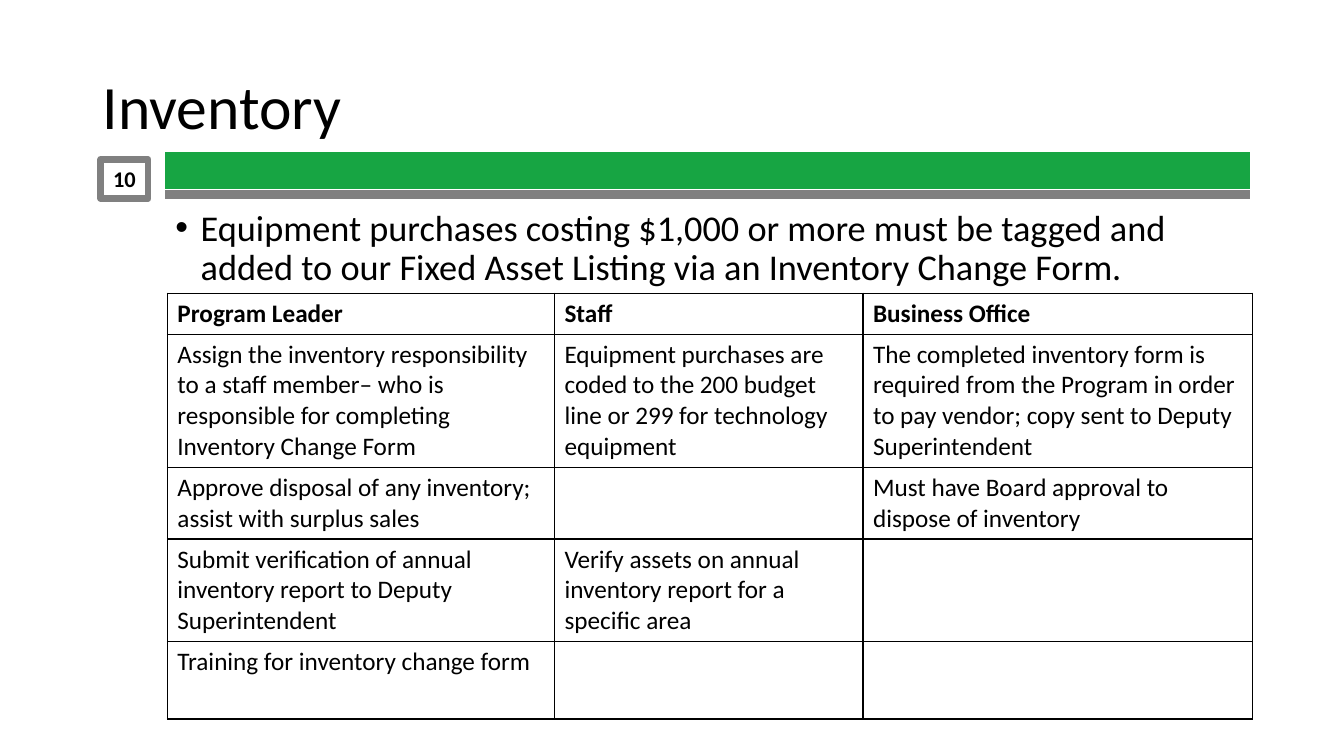
from dataclasses import dataclass

from lxml.etree import SubElement
from pptx import Presentation
from pptx.dml.color import RGBColor
from pptx.enum.shapes import MSO_CONNECTOR, MSO_SHAPE
from pptx.enum.text import MSO_ANCHOR, MSO_AUTO_SIZE, PP_ALIGN
from pptx.oxml.ns import qn
from pptx.slide import Slide
from pptx.table import _Cell
from pptx.text.text import TextFrame
from pptx.util import Inches, Pt

COLORS = {"text": "000000", "green": "17A543", "gray": "808080"}
FONT = "Calibri"
RULE_LEFT, RULE_RIGHT = 1.64, 12.4
COLUMN_WIDTHS = [3.84, 3.06, 3.86]


@dataclass
class Rule:
    top: float
    width: float
    color: str


@dataclass
class TableRow:
    height: float
    texts: tuple[str, str, str]
    bold: bool = False


RULES = [Rule(1.69, 26.25, "green"), Rule(1.93, 6.5, "gray")]

TABLE_ROWS = [
    TableRow(0.37, ("Program Leader", "Staff", "Business Office"), bold=True),
    TableRow(1.2, (
        "Assign the inventory responsibility to a staff member– who is "
        "responsible for completing Inventory Change Form",
        "Equipment purchases are coded to the 200 budget line or 299 for "
        "technology equipment",
        "The completed inventory form is required from the Program in order "
        "to pay vendor; copy sent to Deputy Superintendent",
    )),
    TableRow(0.65, (
        "Approve disposal of any inventory; assist with surplus sales",
        "",
        "Must have Board approval to dispose of inventory",
    )),
    TableRow(0.92, (
        "Submit verification of annual inventory report to Deputy Superintendent",
        "Verify assets on annual inventory report for a specific area",
        "",
    )),
    TableRow(0.77, ("Training for inventory change form", "", "")),
]


def rgb(name: str) -> RGBColor:
    return RGBColor.from_string(COLORS[name])


def write_text(frame: TextFrame, text: str, size: float, bold: bool = False,
               alignment: PP_ALIGN = PP_ALIGN.LEFT) -> None:
    frame.text = text
    frame.word_wrap = True
    paragraph = frame.paragraphs[0]
    paragraph.alignment = alignment
    font = paragraph.font
    font.name, font.size, font.bold = FONT, Pt(size), bold
    font.color.rgb = rgb("text")


def add_title(slide: Slide) -> None:
    title = slide.shapes.title
    title.left, title.top = Inches(0.92), Inches(0.36)
    title.width, title.height = Inches(11.5), Inches(1.45)
    frame = title.text_frame
    write_text(frame, "Inventory", 44)
    frame.auto_size = MSO_AUTO_SIZE.NONE
    frame.vertical_anchor = MSO_ANCHOR.MIDDLE
    frame.paragraphs[0].line_spacing = 0.9


def add_body(slide: Slide) -> None:
    body = slide.placeholders[1]
    body.left, body.top = Inches(RULE_LEFT), Inches(2.03)
    body.width, body.height = Inches(10.77), Inches(0.89)
    frame = body.text_frame
    write_text(frame, "Equipment purchases costing $1,000 or more must be tagged and "
               "added to our Fixed Asset Listing via an Inventory Change Form.", 25.9)
    frame.auto_size = MSO_AUTO_SIZE.NONE
    paragraph = frame.paragraphs[0]
    paragraph.line_spacing = 0.9
    paragraph.space_before = Pt(10)
    properties = paragraph._p.get_or_add_pPr()
    properties.set("marL", str(Inches(0.25)))
    properties.set("indent", str(Inches(-0.25)))


def add_rule(slide: Slide, rule: Rule) -> None:
    connector = slide.shapes.add_connector(
        MSO_CONNECTOR.STRAIGHT, Inches(RULE_LEFT), Inches(rule.top),
        Inches(RULE_RIGHT), Inches(rule.top))
    connector.line.color.rgb = rgb(rule.color)
    connector.line.width = Pt(rule.width)
    SubElement(connector._element.spPr, qn("a:effectLst"))


def add_number_box(slide: Slide) -> None:
    box = slide.shapes.add_shape(
        MSO_SHAPE.RECTANGLE, Inches(1), Inches(1.58), Inches(0.47), Inches(0.39))
    box.shadow.inherit = False
    box.fill.background()
    box.line.color.rgb = rgb("gray")
    box.line.width = Pt(4.75)
    frame = box.text_frame
    frame.margin_left = frame.margin_right = frame.margin_top = frame.margin_bottom = 0
    frame.vertical_anchor = MSO_ANCHOR.MIDDLE
    write_text(frame, "10", 16, bold=True, alignment=PP_ALIGN.CENTER)


def draw_borders(cell: _Cell) -> None:
    """Outline all four sides; must run before the cell's fill is set."""
    properties = cell._tc.get_or_add_tcPr()
    for side in ("lnL", "lnR", "lnT", "lnB"):
        line = SubElement(properties, qn(f"a:{side}"), w=str(Pt(1)))
        fill = SubElement(line, qn("a:solidFill"))
        SubElement(fill, qn("a:srgbClr"), val=COLORS["text"])


def add_duties_table(slide: Slide) -> None:
    table = slide.shapes.add_table(
        len(TABLE_ROWS), len(COLUMN_WIDTHS), Inches(1.66), Inches(2.91),
        Inches(sum(COLUMN_WIDTHS)), Inches(sum(row.height for row in TABLE_ROWS))).table
    table.first_row = table.horz_banding = False
    for column, width in zip(table.columns, COLUMN_WIDTHS):
        column.width = Inches(width)
    for row_index, row in enumerate(TABLE_ROWS):
        table.rows[row_index].height = Inches(row.height)
        for column_index, text in enumerate(row.texts):
            cell = table.cell(row_index, column_index)
            write_text(cell.text_frame, text, 18, row.bold)
            draw_borders(cell)
            cell.fill.background()


def main() -> None:
    presentation = Presentation()
    presentation.slide_width, presentation.slide_height = Inches(13.33), Inches(7.5)
    slide = presentation.slides.add_slide(presentation.slide_layouts[1])
    add_title(slide)
    add_body(slide)
    for rule in RULES:
        add_rule(slide, rule)
    add_number_box(slide)
    add_duties_table(slide)
    presentation.save("out.pptx")


if __name__ == "__main__":
    main()
